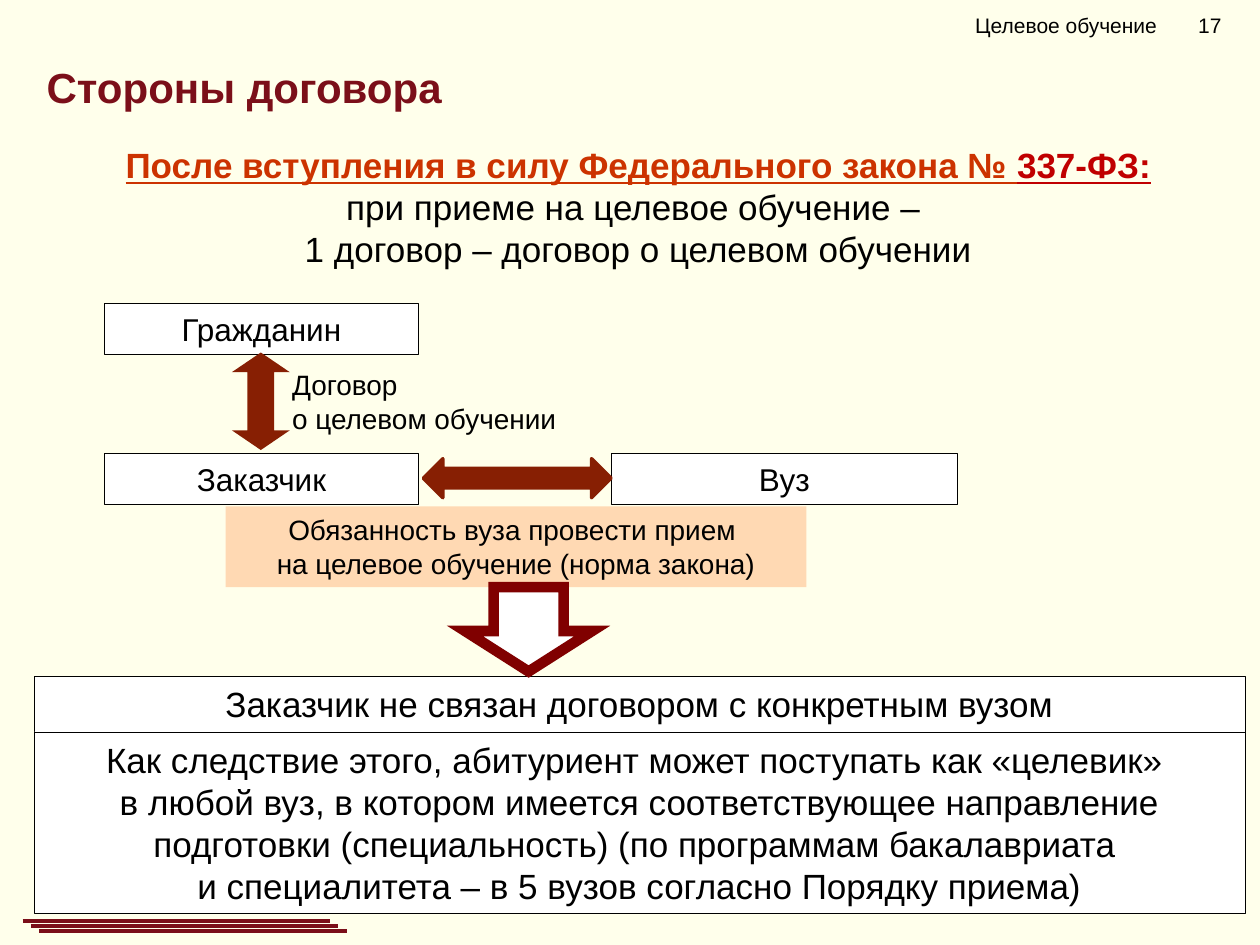
from dataclasses import dataclass

from pptx import Presentation
from pptx.dml.color import RGBColor
from pptx.enum.shapes import MSO_CONNECTOR, MSO_SHAPE as SHAPE
from pptx.enum.text import MSO_ANCHOR as ANCHOR, MSO_AUTO_SIZE as FIT, PP_ALIGN as ALIGN
from pptx.oxml.ns import qn
from pptx.util import Inches, Pt


@dataclass(frozen=True)
class Theme:
    font: str = "Arial"
    page: str = "FFFFEB"
    ink: str = "000000"
    paper: str = "FFFFFF"
    maroon: str = "7B0F19"
    arrow: str = "871F03"
    outline: str = "800000"
    note: str = "FFD9B3"
    orange: str = "CC3300"
    red: str = "C00000"
    header: int = 12
    label: int = 16
    party: int = 18
    body: int = 20
    title: int = 24


THEME = Theme()


def color(value):
    return RGBColor.from_string(value)


def place(shape, box):
    shape.left, shape.top, shape.width, shape.height = map(Inches, box)


def format_span(span, size, ink=THEME.ink, bold=False, underline=False):
    font = span.font
    font.name, font.size = THEME.font, Pt(size)
    font.bold, font.underline = bold, underline
    font.color.rgb = color(ink)


def write(shape, text, size, align=ALIGN.CENTER, anchor=ANCHOR.TOP, fit=FIT.NONE, **style):
    frame = shape.text_frame
    frame.word_wrap, frame.auto_size, frame.vertical_anchor = True, fit, anchor
    frame.text = text
    for para in frame.paragraphs:
        para.alignment = align
        para.space_before = Pt(0)
        for span in para.runs:
            format_span(span, size, **style)
    return frame


def add_filled(page, kind, box, fill, line=None, width=0.25):
    shape = page.shapes.add_shape(kind, *map(Inches, box))
    shape.shadow.inherit = False
    shape.fill.solid()
    shape.fill.fore_color.rgb = color(fill)
    if line:
        shape.line.color.rgb = color(line)
        shape.line.width = Pt(width)
    else:
        shape.line.fill.background()
    return shape


def add_panel(page, box, text, size, fill=THEME.paper, line=THEME.ink):
    panel = add_filled(page, SHAPE.RECTANGLE, box, fill, line)
    write(panel, text, size, fit=FIT.SHAPE_TO_FIT_TEXT)


def add_arrow(page, kind, box, fill, line, width, adjustments=(), rotation=0, miter=False):
    arrow = add_filled(page, kind, box, fill, line, width)
    arrow.rotation = rotation
    for index, value in enumerate(adjustments):
        arrow.adjustments[index] = value
    if miter:
        outline = arrow.line._get_or_add_ln()
        join = outline.makeelement(qn("a:miter"), {"lim": "800000"})
        outline.append(join)


def add_header(page, box):
    """Section name, then the page number at a tab stop."""
    header = page.shapes.add_textbox(*map(Inches, box))
    frame = write(header, "Целевое обучение\t17", THEME.header, ALIGN.LEFT, ANCHOR.MIDDLE)
    frame.margin_left = Inches(0.3)
    properties = frame.paragraphs[0]._p.get_or_add_pPr()
    stops = properties.makeelement(qn("a:tabLst"), {})
    stops.append(stops.makeelement(qn("a:tab"), {"pos": str(Inches(1.77)), "algn": "l"}))
    properties.append(stops)


def add_title(page, box):
    title = page.shapes.title
    place(title, box)
    write(title, "Стороны договора", THEME.title, ALIGN.LEFT, ink=THEME.maroon, bold=True)


def add_statement(page, box):
    body = page.placeholders[1]
    place(body, box)
    frame = write(
        body,
        "После вступления в силу Федерального закона № \n"
        "при приеме на целевое обучение – \n"
        "1 договор – договор о целевом обучении",
        THEME.body,
    )
    for para in frame.paragraphs:
        properties = para._p.get_or_add_pPr()
        properties.set("marL", "0")
        properties.set("indent", "0")
        properties.append(properties.makeelement(qn("a:buNone"), {}))
    heading = frame.paragraphs[0]
    law = heading.add_run()
    law.text = "337-ФЗ:"
    for span, ink in zip(heading.runs, (THEME.orange, THEME.red)):
        format_span(span, THEME.body, ink, bold=True, underline=True)


def add_parties(page, box):
    """Citizen above customer, with the university to the right."""
    left, top, width, height = box
    party_width, party_height, university_width = 2.49, 0.4, 2.75
    lower = top + 1.19
    university = left + width - university_width

    label = page.shapes.add_textbox(*map(Inches, (left + 1.39, top + 0.46, 2.69, 0.64)))
    write(label, "Договор\nо целевом обучении", THEME.label, ALIGN.LEFT,
          fit=FIT.SHAPE_TO_FIT_TEXT)
    for text, x, y, span_width in (
        ("Вуз", university, lower, university_width),
        ("Заказчик", left, lower, party_width),
        ("Гражданин", left, top, party_width),
    ):
        add_panel(page, (x, y, span_width, party_height), text, THEME.party)

    style = dict(fill=THEME.arrow, line=THEME.arrow, width=2)
    add_arrow(page, SHAPE.LEFT_RIGHT_ARROW, (left + 0.87, top + 0.59, 0.74, 0.37),
              adjustments=(0.5, 0.34), rotation=90, miter=True, **style)
    add_arrow(page, SHAPE.LEFT_RIGHT_ARROW, (left + 2.53, lower + 0.04, 1.49, 0.31), **style)
    add_panel(page, (left + 0.96, top + height - 0.64, 4.61, 0.64),
              "Обязанность вуза провести прием \nна целевое обучение (норма закона)",
              THEME.label, THEME.note, None)


def add_conclusion(page, box):
    left, top, width, height = box
    split = 0.44
    add_panel(page, (left, top, width, split),
              "Заказчик не связан договором с конкретным вузом", THEME.body)
    add_panel(page, (left, top + split, width, height - split),
              "Как следствие этого, абитуриент может поступать как «целевик» \n"
              "в любой вуз, в котором имеется соответствующее направление подготовки "
              "(специальность) (по программам бакалавриата \n"
              "и специалитета – в 5 вузов согласно Порядку приема)", THEME.body)
    add_arrow(page, SHAPE.RIGHT_ARROW, (left + 3.59, top - 0.88, 0.67, 1.01),
              THEME.paper, THEME.outline, 6, (0.55, 0.48), rotation=90, miter=True)


def add_footer_lines(page, box):
    left, top, width, height = box
    count, length = 3, 2.44
    group = page.shapes.add_group_shape()
    for index in range(count):
        x = left + index * (width - length) / (count - 1)
        y = top + index * height / (count - 1)
        line = group.shapes.add_connector(
            MSO_CONNECTOR.STRAIGHT, *map(Inches, (x, y, x + length, y)))
        line.line.color.rgb = color(THEME.maroon)
        line.line.width = Pt(2.25)
        properties = line._element.spPr
        properties.append(properties.makeelement(qn("a:effectLst"), {}))


def main():
    deck = Presentation()
    deck.slide_width, deck.slide_height = Inches(10), Inches(7.5)
    page = deck.slides.add_slide(deck.slide_layouts[1])
    page.background.fill.solid()
    page.background.fill.fore_color.rgb = color(THEME.page)

    add_parties(page, (0.83, 2.41, 6.77, 2.25))
    add_header(page, (7.44, 0, 2.56, 0.4))
    add_conclusion(page, (0.27, 5.37, 9.61, 1.88))
    add_statement(page, (0.24, 1.09, 9.65, 1.11))
    add_title(page, (0.27, 0.44, 9.29, 0.47))
    add_footer_lines(page, (0.18, 7.31, 2.57, 0.08))
    deck.save("out.pptx")


if __name__ == "__main__":
    main()
